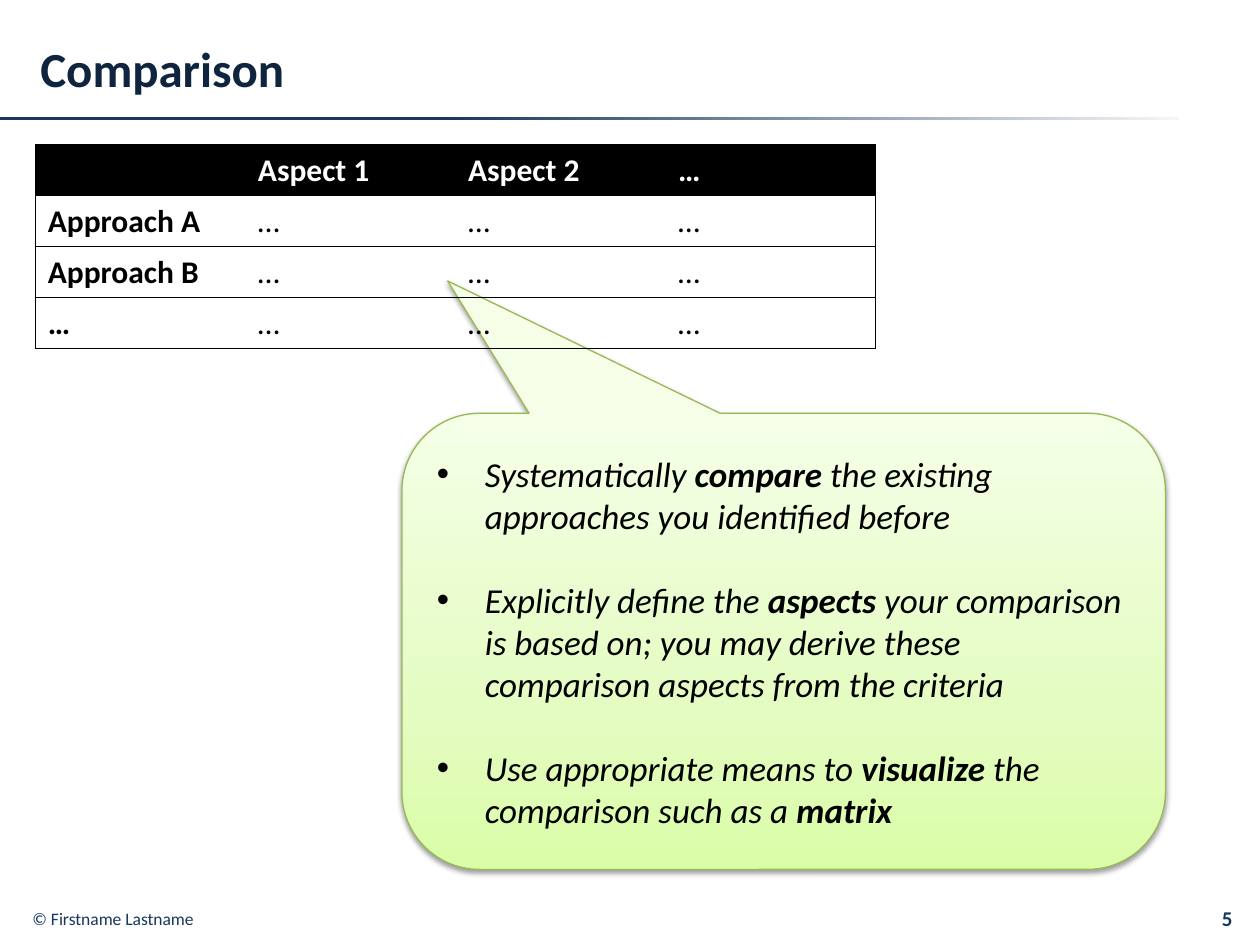
"""Build the comparison slide with its matrix and an explanatory callout."""
from dataclasses import dataclass

from lxml.etree import SubElement
from pptx import Presentation
from pptx.dml.color import RGBColor
from pptx.enum.shapes import MSO_CONNECTOR, MSO_SHAPE
from pptx.enum.text import MSO_ANCHOR, PP_ALIGN
from pptx.oxml import parse_xml
from pptx.oxml.ns import nsdecls, qn
from pptx.util import Inches, Pt


@dataclass(frozen=True)
class Theme:
    font: str = "Calibri"
    ink: str = "000000"
    paper: str = "FFFFFF"
    heading: str = "0F243E"
    navy: str = "17375E"
    edge: str = "98B955"
    greens: tuple = ((0, "DAFDA7", 100), (35, "E4FCC2", 100), (100, "F5FFE7", 100))
    fade: tuple = ((0, "FFFFFF", 0), (100, "FFFFFF", 100))
    title: int = 28
    advice: int = 20
    table: int = 18
    number: int = 12
    footer: int = 10


theme = Theme()
deck = Presentation()
deck.slide_width, deck.slide_height = Inches(10), Inches(7.5)
slide = deck.slides.add_slide(deck.slide_layouts[5])
shapes = slide.shapes


def area(left, top, width, height):
    """Turn percentages of the slide into lengths."""
    across, down = deck.slide_width / 100, deck.slide_height / 100
    return [int(v) for v in (left * across, top * down, width * across, height * down)]


def style(font, size, color, bold=False, italic=False):
    """Apply the theme font with the given look."""
    font.name, font.size, font.bold, font.italic = theme.font, Pt(size), bold, italic
    font.color.rgb = RGBColor.from_string(color)


left, top, width, _ = area(0, 12.53, 93.6, 0)
rule = shapes.add_connector(MSO_CONNECTOR.STRAIGHT, left, top, left + width, top)
rule.line.color.rgb = RGBColor.from_string(theme.navy)
rule.line.width = Pt(1.5)
SubElement(rule._element.spPr, qn("a:effectLst"))

fade = shapes.add_shape(MSO_SHAPE.RECTANGLE, *area(35.3, 12.27, 60.1, 0.67))
fade.line.fill.background()
callout = shapes.add_shape(MSO_SHAPE.ROUNDED_RECTANGULAR_CALLOUT, *area(31.9, 43.73, 60.6, 48.27))
callout.line.color.rgb = RGBColor.from_string(theme.edge)
callout.line.width = Pt(0.75)
for index, value in enumerate((-0.44, -0.79, 0.17)):
    callout.adjustments[index] = value

for shape, stops, angle in ((fade, theme.fade, 0), (callout, theme.greens, 90)):
    shape.shadow.inherit = False
    shape.fill.gradient()
    shape.fill.gradient_angle = angle
    gradient = shape._element.spPr.find(".//" + qn("a:gsLst"))
    gradient.clear()
    for position, color, opacity in stops:
        gradient.append(parse_xml(
            f'<a:gs {nsdecls("a")} pos="{position * 1000}"><a:srgbClr val="{color}">'
            f'<a:alpha val="{opacity * 1000}"/></a:srgbClr></a:gs>'))

callout._element.spPr.find(qn("a:effectLst")).append(parse_xml(
    f'<a:outerShdw {nsdecls("a")} blurRad="{Pt(3.1)}" dist="{Pt(1.6)}" dir="5400000" rotWithShape="0">'
    f'<a:srgbClr val="{theme.ink}"><a:alpha val="38000"/></a:srgbClr></a:outerShdw>'))

title = shapes.title
title.left, title.top, title.width, title.height = area(2.2, 2.67, 95.3, 8.93)
title.text_frame.text = "Comparison"
title.text_frame.vertical_anchor = MSO_ANCHOR.MIDDLE
heading = title.text_frame.paragraphs[0]
heading.alignment = PP_ALIGN.LEFT
style(heading.runs[0].font, theme.title, theme.heading, bold=True)

for text, place, size, bold, align, anchor, wrap in (
    ("5", area(92.5, 95.6, 6.3, 3.6), theme.number, True, PP_ALIGN.RIGHT, MSO_ANCHOR.BOTTOM, True),
    ("© Firstname Lastname", area(1.6, 95.47, 15, 3.6), theme.footer, False, PP_ALIGN.LEFT, MSO_ANCHOR.TOP, False),
):
    frame = shapes.add_textbox(*place).text_frame
    frame.text, frame.word_wrap, frame.vertical_anchor = text, wrap, anchor
    frame.paragraphs[0].alignment = align
    style(frame.paragraphs[0].runs[0].font, size, theme.navy, bold)

matrix = (
    ("", "Aspect 1", "Aspect 2", "…"),
    ("Approach A", "…", "…", "…"),
    ("Approach B", "…", "…", "…"),
    ("…", "…", "…", "…"),
)
table = shapes.add_table(len(matrix), len(matrix[0]), *area(2.8, 15.33, 66.7, 21.6)).table
table.horz_banding = False
table._tbl.tblPr.find(qn("a:tableStyleId")).text = "{2D5ABB26-0587-4C30-8999-92F81FD0307C}"
for row, texts in enumerate(matrix):
    for column, text in enumerate(texts):
        cell = table.cell(row, column)
        cell.text = text
        header = row == 0
        style(cell.text_frame.paragraphs[0].font, theme.table,
              theme.paper if header else theme.ink, bold=header or column == 0)
        for run in cell.text_frame.paragraphs[0].runs:
            style(run.font, theme.table, theme.paper if header else theme.ink, header or column == 0)
        sides = {"L": column == 0, "R": column == len(texts) - 1, "T": True, "B": True}
        for side in (name for name, drawn in sides.items() if drawn):
            cell._tc.get_or_add_tcPr().append(parse_xml(
                f'<a:ln{side} {nsdecls("a")} w="{Pt(0.75)}"><a:solidFill>'
                f'<a:srgbClr val="{theme.ink}"/></a:solidFill></a:ln{side}>'))
        if header:
            cell.fill.solid()
            cell.fill.fore_color.rgb = RGBColor.from_string(theme.ink)
        else:
            cell.fill.background()

advice = (
    (("Systematically ", False), ("compare", True),
     (" the existing approaches you identified before", False)),
    (("Explicitly define the ", False), ("aspects", True),
     (" your comparison is based on; you may derive these comparison aspects from the criteria", False)),
    (("Use appropriate means to ", False), ("visualize", True),
     (" the comparison such as a ", False), ("matrix", True)),
)
frame = callout.text_frame
frame.word_wrap = True
frame.vertical_anchor = MSO_ANCHOR.MIDDLE
for index, parts in enumerate(advice):
    point = frame.paragraphs[0] if index == 0 else frame.add_paragraph()
    point.alignment = PP_ALIGN.LEFT
    if index:
        point.space_before = Pt(24)
    properties = point._p.get_or_add_pPr()
    properties.set("marL", str(Inches(0.38)))
    properties.set("indent", str(-Inches(0.38)))
    SubElement(properties, qn("a:buFont"), typeface="Arial")
    SubElement(properties, qn("a:buChar"), char="•")
    for text, bold in parts:
        run = point.add_run()
        run.text = text
        style(run.font, theme.advice, theme.ink, bold, italic=True)

deck.save("out.pptx")
